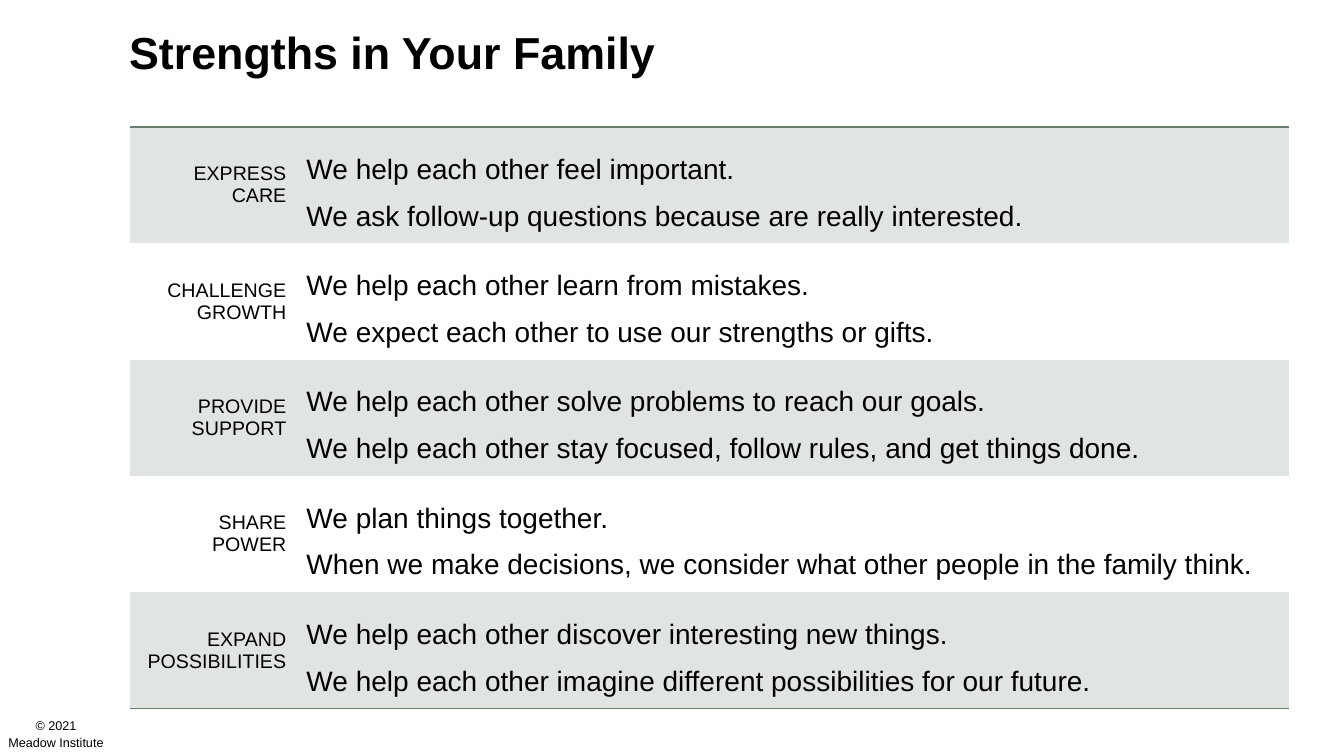
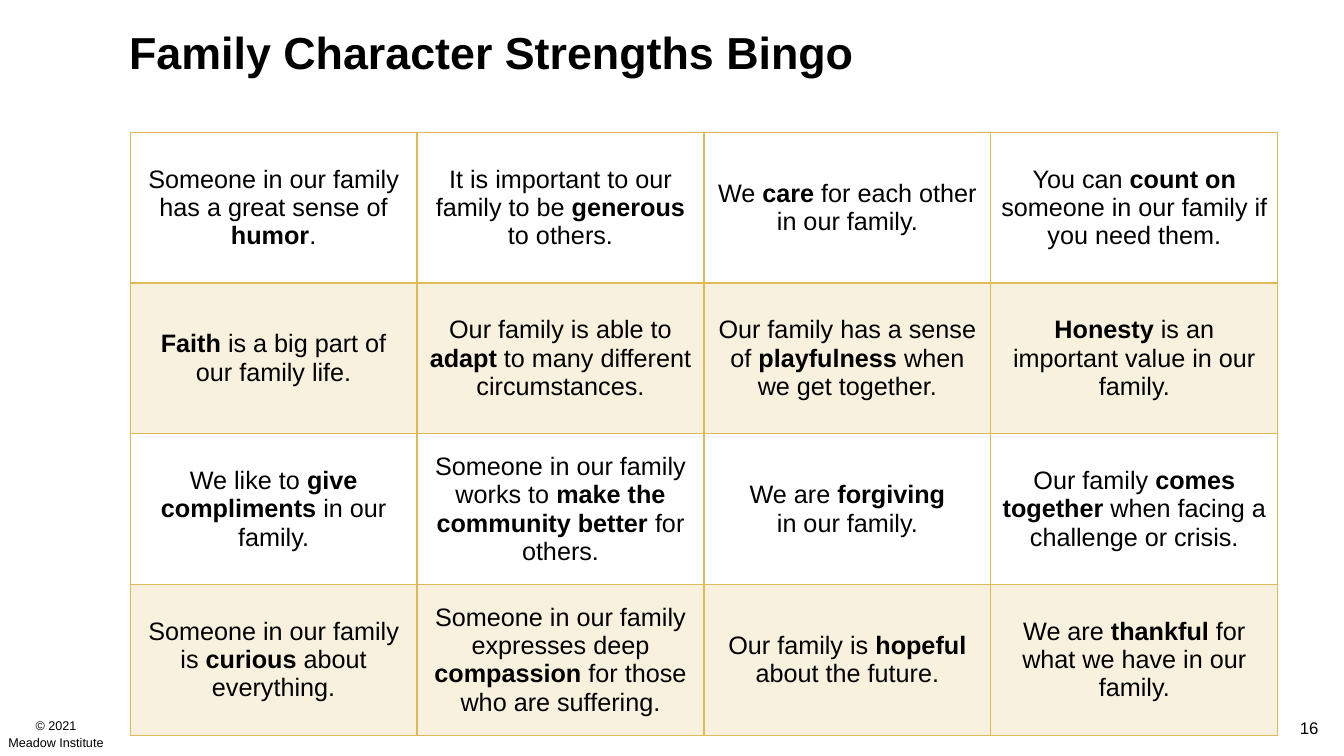
from lxml import etree
from pptx import Presentation
from pptx import util as u
from pptx.dml.color import RGBColor
from pptx.enum import text as t
from pptx.oxml import ns

FONT = "Arial"
BLACK = "000000"
GREEN, GREEN_TINT = "677E6C", "E1E5E2"
GOLD, GOLD_TINT = "DDBA55", "F8F1DD"
PLAIN_TABLE = "{2D5ABB26-0587-4C30-8999-92F81FD0307C}"
SIDES = {"left": "a:lnL", "right": "a:lnR", "top": "a:lnT", "bottom": "a:lnB"}

# Boxes in centimetres: left, top, width, height
TITLE_BOX = (3, 0.53, 25.65, 1.73)
COPYRIGHT_BOX = (-0.33, 17.96, 3.48, 1.02)
NUMBER_BOX = (25.86, 17.96, 7.62, 1.02)
STRENGTHS_BOX = (3.28, 3.2, 29.2, 14.65)
BINGO_BOX = (3.28, 3.33, 28.92, 15.2)
LABEL_WIDTH = 4.19

COPYRIGHT = ["© 2021", "Meadow Institute"]

STRENGTHS = [
    ("EXPRESS CARE",
     ["We help each other feel important.",
      "We ask follow-up questions because are really interested."]),
    ("CHALLENGE GROWTH",
     ["We help each other learn from mistakes.",
      "We expect each other to use our strengths or gifts."]),
    ("PROVIDE SUPPORT",
     ["We help each other solve problems to reach our goals.",
      "We help each other stay focused, follow rules, and get things done."]),
    ("SHARE POWER",
     ["We plan things together.",
      "When we make decisions, we consider what other people in the family think."]),
    ("EXPAND POSSIBILITIES",
     ["We help each other discover interesting new things.",
      "We help each other imagine different possibilities for our future."]),
]

# Asterisks enclose the bold words
BINGO = [
    ["Someone in our family has a great sense of *humor*.",
     "It is important to our family to be *generous* to others.",
     "We *care* for each other in our family.",
     "You can *count on* someone in our family if you need them."],
    ["*Faith* is a big part of our family life.",
     "Our family is able to *adapt* to many different circumstances.",
     "Our family has a sense of *playfulness* when we get together.",
     "*Honesty* is an important value in our family."],
    ["We like to *give compliments* in our family.",
     "Someone in our family works to *make the community better* for others.",
     "We are *forgiving*\nin our family.",
     "Our family *comes together* when facing a challenge or crisis."],
    ["Someone in our family is *curious* about everything.",
     "Someone in our family expresses deep *compassion* for those who are suffering.",
     "Our family is *hopeful* about the future.",
     "We are *thankful* for what we have in our family."],
]


def colour(value):
    return RGBColor.from_string(value)


def assign(target, **values):
    for name, value in values.items():
        setattr(target, name, value)


def lengths(box):
    return [u.Cm(value) for value in box]


def write(frame, lines, size, align=t.PP_ALIGN.LEFT, spacing=1.0, bold=False):
    """Write one paragraph a line; asterisks switch bold, newlines break."""
    for index, line in enumerate(lines):
        para = frame.add_paragraph() if index else frame.paragraphs[0]
        assign(para, alignment=align, line_spacing=spacing)
        for part, words in enumerate(line.split("*")):
            for piece, wording in enumerate(words.split("\n")):
                if piece:
                    para.add_line_break()
                if wording:
                    span = para.add_run()
                    span.text = wording
                    assign(span.font, name=FONT, size=u.Pt(size),
                           bold=bold or part % 2 == 1)
                    span.font.color.rgb = colour(BLACK)


def add_title(page, wording):
    title = page.shapes.title
    left, top, width, height = lengths(TITLE_BOX)
    assign(title, left=left, top=top, width=width, height=height)
    assign(title.text_frame, vertical_anchor=t.MSO_ANCHOR.MIDDLE,
           auto_size=t.MSO_AUTO_SIZE.NONE, word_wrap=True)
    write(title.text_frame, [wording], 32, spacing=0.9, bold=True)


def add_text(page, box, lines, size, anchor, **layout):
    frame = page.shapes.add_textbox(*lengths(box)).text_frame
    assign(frame, word_wrap=True, vertical_anchor=anchor)
    write(frame, lines, size, **layout)


def add_page(deck, title):
    page = deck.slides.add_slide(deck.slide_layouts[5])
    add_text(page, COPYRIGHT_BOX, COPYRIGHT, 9, t.MSO_ANCHOR.MIDDLE,
             align=t.PP_ALIGN.CENTER, spacing=1.1)
    add_title(page, title)
    return page


def add_plain_table(page, box, rows, widths):
    frame = page.shapes.add_table(rows, len(widths), *lengths(box))
    frame.element.xpath(".//a:tableStyleId")[0].text = PLAIN_TABLE
    table = frame.table
    assign(table, first_row=False, horz_banding=False)
    for column, width in zip(table.columns, widths):
        column.width = u.Cm(width)
    for row in table.rows:
        row.height = u.Cm(box[3] / rows)
    return table


def format_cell(cell, line, borders, tint):
    """Draw borders given as side: points, then fill with the tint, if any."""
    cell.vertical_anchor = t.MSO_ANCHOR.MIDDLE
    properties = cell._tc.get_or_add_tcPr()
    for side, tag in SIDES.items():
        if side in borders:
            edge = etree.SubElement(properties, ns.qn(tag), w=str(u.Pt(borders[side])))
            fill = etree.SubElement(edge, ns.qn("a:solidFill"))
            etree.SubElement(fill, ns.qn("a:srgbClr"), val=line)
    if tint:
        cell.fill.solid()
        cell.fill.fore_color.rgb = colour(tint)
    else:
        cell.fill.background()


def add_strengths(page, box):
    table = add_plain_table(page, box, len(STRENGTHS),
                            [LABEL_WIDTH, box[2] - LABEL_WIDTH])
    edges = {0: {"top": 1}, len(STRENGTHS) - 1: {"bottom": 1}}
    for row, (label, statements) in enumerate(STRENGTHS):
        label_cell, statement_cell = table.cell(row, 0), table.cell(row, 1)
        for cell in (label_cell, statement_cell):
            format_cell(cell, GREEN, edges.get(row, {}),
                        None if row % 2 else GREEN_TINT)
        label_cell.margin_left = u.Cm(0.38)
        write(label_cell.text_frame, [label], 14, align=t.PP_ALIGN.RIGHT)
        write(statement_cell.text_frame, statements, 20, spacing=1.5)


def add_bingo(page, box):
    columns = len(BINGO[0])
    table = add_plain_table(page, box, len(BINGO), [box[2] / columns] * columns)
    for row, phrases in enumerate(BINGO):
        borders = dict.fromkeys(SIDES, 1)
        if row < 2:
            borders["top" if row else "bottom"] = 2
        for column, phrase in enumerate(phrases):
            cell = table.cell(row, column)
            format_cell(cell, GOLD, borders, GOLD_TINT if row % 2 else None)
            write(cell.text_frame, [phrase], 18, align=t.PP_ALIGN.CENTER)


def main():
    deck = Presentation()
    assign(deck, slide_width=u.Cm(33.87), slide_height=u.Cm(19.05))

    add_strengths(add_page(deck, "Strengths in Your Family"), STRENGTHS_BOX)

    bingo_page = add_page(deck, "Family Character Strengths Bingo")
    add_text(bingo_page, NUMBER_BOX, ["16"], 12, t.MSO_ANCHOR.TOP,
             align=t.PP_ALIGN.RIGHT)
    add_bingo(bingo_page, BINGO_BOX)

    deck.save("out.pptx")


if __name__ == "__main__":
    main()
